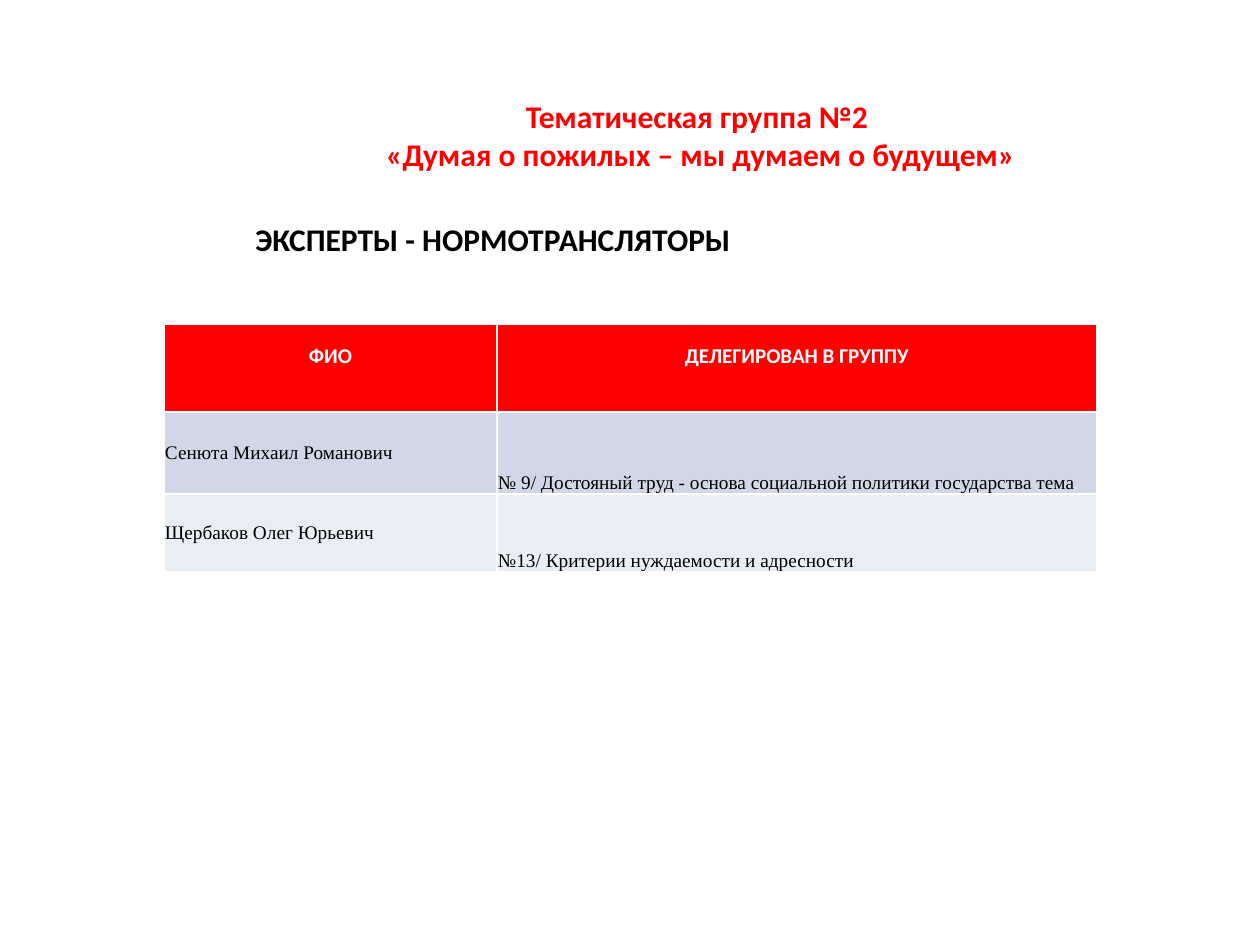
"""Build the slide listing the experts of thematic group 2."""
from pptx import Presentation
from pptx.dml.color import RGBColor
from pptx.enum.text import MSO_ANCHOR as ANCHOR, MSO_AUTO_SIZE as FIT, PP_ALIGN as ALIGN
from pptx.util import Emu, Pt

C = {"red": "FF0000", "black": "000000", "white": "FFFFFF",
     "band1": "D0D8E8", "band2": "E9EDF4"}


def px(n):
    return Emu(round(n * 914400 / 126))


def style(p, size, color, font="Calibri", bold=True, align=ALIGN.LEFT):
    p.alignment = align
    p.font.size = Pt(size)
    p.font.name = font
    p.font.bold = bold
    p.font.color.rgb = RGBColor.from_string(C[color])


prs = Presentation()
prs.slide_width, prs.slide_height = px(1260), px(945)
s = prs.slides.add_slide(prs.slide_layouts[6])

tf = s.shapes.add_textbox(px(243), px(214), px(505), px(50)).text_frame
tf.word_wrap = False
tf.auto_size = FIT.SHAPE_TO_FIT_TEXT
tf.text = "ЭКСПЕРТЫ - НОРМОТРАНСЛЯТОРЫ"
style(tf.paragraphs[0], 18, "black")

tf = s.shapes.add_textbox(px(243), px(93), px(915), px(83)).text_frame
tf.word_wrap = True
tf.vertical_anchor = ANCHOR.MIDDLE
tf.text = "Тематическая группа №2 \n«Думая о пожилых – мы думаем о будущем»"
for p in tf.paragraphs:
    style(p, 18, "red", align=ALIGN.CENTER)

rows = [
    ("ФИО", "ДЕЛЕГИРОВАН В ГРУППУ"),
    ("Сенюта Михаил Романович",
     "№ 9/ Достояный труд - основа социальной политики государства тема"),
    ("Щербаков Олег Юрьевич", "№13/ Критерии нуждаемости и адресности"),
]
fills = ["red", "band1", "band2"]
widths = [333, 600]
heights = [88, 82, 78]

table = s.shapes.add_table(len(rows), len(widths), px(164), px(324),
                           px(sum(widths)), px(sum(heights))).table
for col, width in zip(table.columns, widths):
    col.width = px(width)
for i, (row, height) in enumerate(zip(rows, heights)):
    table.rows[i].height = px(height)
    for j, text in enumerate(row):
        cell = table.cell(i, j)
        cell.text = text
        cell.fill.solid()
        cell.fill.fore_color.rgb = RGBColor.from_string(C[fills[i]])
        p = cell.text_frame.paragraphs[0]
        if i == 0:
            style(p, 12, "white", align=ALIGN.CENTER)
            p.line_spacing = 1.5
        else:
            style(p, 11, "black", "Times New Roman", bold=False)
            cell.margin_left = cell.margin_right = cell.margin_top = px(1)
            cell.margin_bottom = 0
            cell.vertical_anchor = ANCHOR.BOTTOM if j else ANCHOR.MIDDLE

prs.save("out.pptx")
